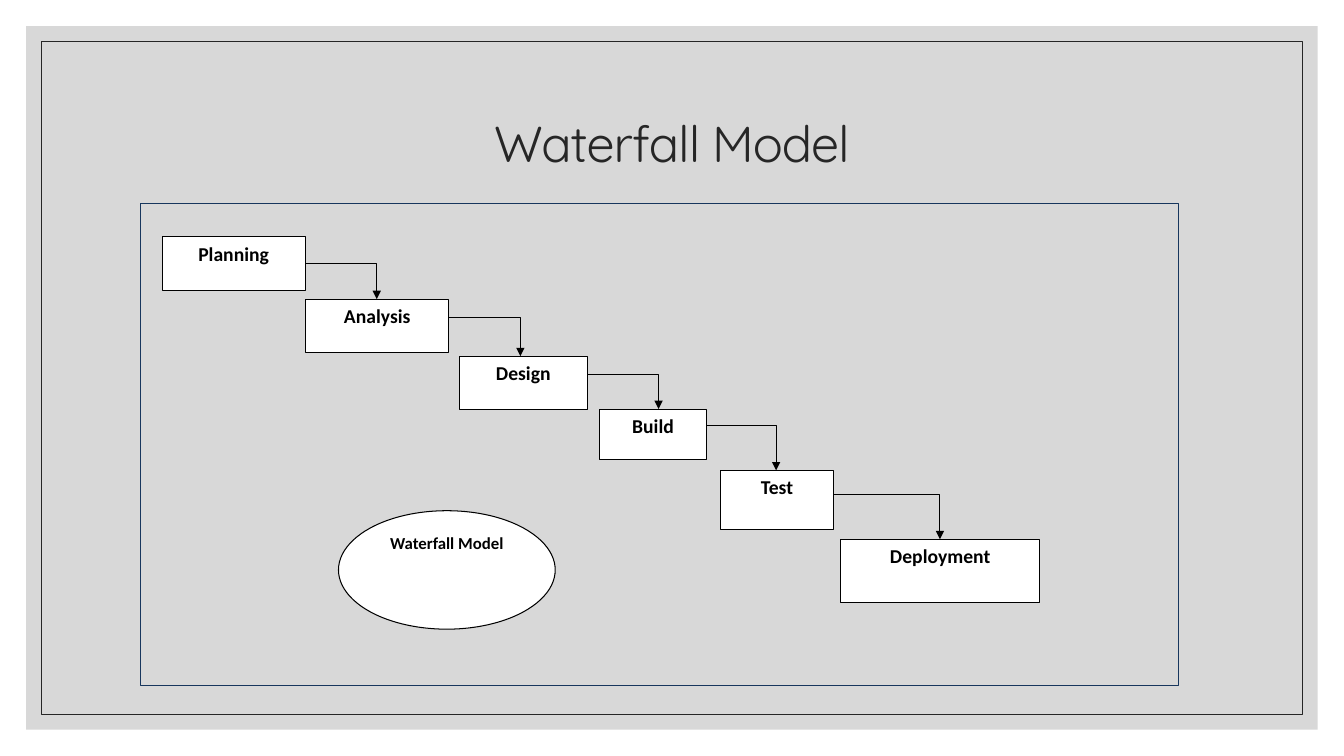
from itertools import pairwise
from lxml.etree import SubElement
from pptx import Presentation
from pptx.dml.color import RGBColor
from pptx.enum.shapes import MSO_CONNECTOR, MSO_SHAPE
from pptx.enum.text import MSO_ANCHOR, MSO_AUTO_SIZE, PP_ALIGN
from pptx.oxml.ns import qn
from pptx.util import Inches, Pt

COLS, ROWS = 160, 90
STEPS = [
    ("Planning", 19.3, 28.2, 17.05, 6.4),
    ("Analysis", 36.4, 35.6, 17.05, 6.4),
    ("Design", 54.7, 42.4, 15.2, 6.4),
    ("Build", 71.4, 48.7, 12.7, 6),
    ("Test", 85.8, 56, 13.4, 7),
    ("Deployment", 100.1, 64.2, 23.65, 7.55),
]
LINKS = [(3.2, 8.5), (2.2, 8.5), (2.2, 8.5), (1.9, 8.3), (2.9, 12.7)]


def color(hue):
    return RGBColor.from_string(hue)


def write(frame, text, size=14, font="Calibri", hue="000000", bold=True,
          anchor=MSO_ANCHOR.TOP, lead=None, track=None):
    frame.word_wrap = True
    frame.auto_size = MSO_AUTO_SIZE.NONE
    frame.vertical_anchor = anchor
    para = frame.paragraphs[0]
    para.alignment = PP_ALIGN.CENTER
    para.line_spacing = lead
    run = para.add_run()
    run.text = text
    run.font.size = Pt(size)
    run.font.name = font
    run.font.bold = bold
    run.font.color.rgb = color(hue)
    if track is not None:
        run.font._element.set("spc", str(track))


class Board:
    ink = "000000"
    paper = "FFFFFF"
    width = 0.75

    def __init__(self, deck):
        self.slide = deck.slides.add_slide(deck.slide_layouts[5])
        self.col = deck.slide_width / COLS
        self.row = deck.slide_height / ROWS

    def place(self, x, y, w, h):
        return [round(n) for n in (x * self.col, y * self.row,
                                   w * self.col, h * self.row)]

    def shape(self, area, kind=MSO_SHAPE.RECTANGLE, fill=None, line=None,
              width=width, alpha=None):
        item = self.slide.shapes.add_shape(kind, *self.place(*area))
        item.shadow.inherit = False
        if fill:
            item.fill.solid()
            item.fill.fore_color.rgb = color(fill)
        else:
            item.fill.background()
        if line:
            item.line.color.rgb = color(line)
            item.line.width = Pt(width)
        else:
            item.line.fill.background()
        if alpha:
            tint = next(item.element.spPr.iter(qn("a:srgbClr")))
            SubElement(tint, qn("a:alpha"), val=str(alpha * 1000))
        return item

    def inset(self, gap, **style):
        self.shape((gap, gap, COLS - 2 * gap, ROWS - 2 * gap), **style)

    def title(self, text, area):
        item = self.slide.shapes.title
        item.left, item.top, item.width, item.height = self.place(*area)
        item.element.getparent().append(item.element)
        write(item.text_frame, text, size=36, font="Quicksand", hue="262626",
              bold=False, anchor=MSO_ANCHOR.MIDDLE, lead=0.9, track=-70)

    def label(self, text, area, kind=MSO_SHAPE.RECTANGLE, size=14):
        item = self.shape(area, kind, self.paper, self.ink)
        write(item.text_frame, text, size=size, hue=self.ink)

    def arrow(self, x, y, end, foot):
        link = self.slide.shapes.add_connector(
            MSO_CONNECTOR.ELBOW, *self.place(x, y, end, foot))
        link.line.color.rgb = color(self.ink)
        link.line.width = Pt(self.width)
        props = link.element.spPr
        props.find(qn("a:prstGeom")).set("prst", "bentConnector2")
        SubElement(props.find(qn("a:ln")), qn("a:tailEnd"), type="triangle")
        SubElement(props, qn("a:effectLst"))


def main():
    deck = Presentation()
    deck.slide_width, deck.slide_height = Inches(13.33), Inches(7.5)
    board = Board(deck)
    board.inset(3.12, fill="BFBFBF", alpha=60)
    board.inset(4.92, line="262626", width=0.5)
    board.title("Waterfall Model", (14, 8.4, 132, 18))
    board.shape((16.7, 24.2, 123.6, 57.4), line="17365D")
    for name, *area in STEPS:
        board.label(name, area)
    for (step, after), (drop, run) in zip(pairwise(STEPS), LINKS):
        name, x, y, w, h = step
        board.arrow(x + w, y + drop, x + w + run, after[2])
    board.label("Waterfall Model", (40.3, 60.8, 25.8, 14.1),
                MSO_SHAPE.OVAL, 12)
    deck.save("out.pptx")


if __name__ == "__main__":
    main()
